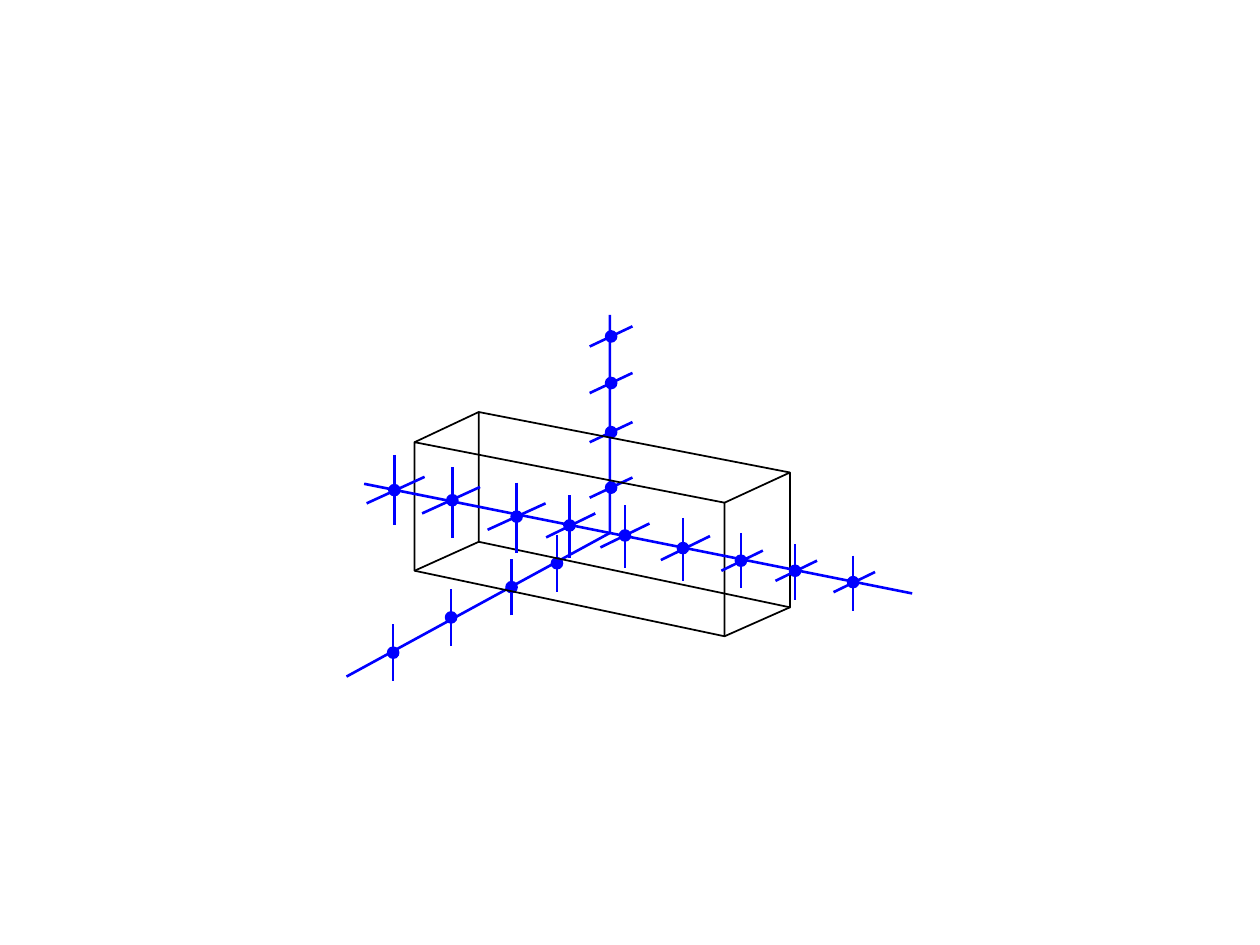
from lxml import etree
from pptx import Presentation
from pptx.dml.color import RGBColor
from pptx.enum.shapes import MSO_CONNECTOR, MSO_SHAPE
from pptx.oxml.ns import qn
from pptx.util import Inches, Pt

STRAIGHT = MSO_CONNECTOR.STRAIGHT
OVAL = MSO_SHAPE.OVAL
BLUE, BLACK = "0000FF", "000000"
AXIS_WIDTH, EDGE_WIDTH = 1.5, 1
DOT_SIZE = 0.09

# Figure box: left, top; all other positions are relative to it
FIGURE_BOX = (2.75, 2.5)

LONG_AXIS = ((0.14, 1.34), (4.49, 2.21))
# Nodes: x, y, top of upright tick, x of slanted tick
LONG_NODES = [
    (0.38, 1.39, 1.11, 0.39), (0.84, 1.47, 1.21, 0.83), (1.35, 1.6, 1.33, 1.35),
    (1.77, 1.67, 1.43, 1.78), (2.21, 1.75, 1.51, 2.21), (2.67, 1.85, 1.61, 2.69),
    (3.13, 1.95, 1.73, 3.14), (3.56, 2.03, 1.82, 3.57), (4.02, 2.12, 1.91, 4.03),
]
# Tick sizes shrink after every third node: upright height, slant width, slant rise
LONG_TICKS = [(0.56, 0.46, 0.21), (0.5, 0.39, 0.19), (0.33 + 0.11, 0.33, 0.16)]

BENT_AXIS = [(0, 2.87), (2.09, 1.73), (2.09, 0)]
VERTICAL_NODES = [(2.1, y) for y in (1.37, 0.93, 0.54, 0.17)]
DEPTH_NODES = [(1.67, 1.97), (1.31, 2.16), (0.83, 2.4), (0.37, 2.68)]

FRONT_FACE = [(0.54, 1.01), (0.54, 2.03), (3, 2.55), (3, 1.49)]
BACK_FACE = [(1.05, 0.77), (1.05, 1.8), (3.52, 2.32), (3.52, 1.25)]


def rgb(hex_color):
    return RGBColor.from_string(hex_color)


def place(box, point):
    return Inches(box[0] + point[0]), Inches(box[1] + point[1])


def add_line(shapes, box, start, end, color=BLUE, width=AXIS_WIDTH):
    line = shapes.add_connector(STRAIGHT, *place(box, start), *place(box, end))
    line.line.color.rgb = rgb(color)
    line.line.width = Pt(width)
    etree.SubElement(line._element.spPr, qn("a:effectLst"))


def add_outline(shapes, box, points, color, width, close):
    corners = [place(box, point) for point in points]
    builder = shapes.build_freeform(*corners[0])
    builder.add_line_segments(corners[1:], close=close)
    outline = builder.convert_to_shape()
    outline.fill.background()
    outline.line.color.rgb = rgb(color)
    outline.line.width = Pt(width)
    outline.shadow.inherit = False


def add_dot(shapes, box, center):
    corner = [value - DOT_SIZE / 2 for value in center]
    dot = shapes.add_shape(OVAL, *place(box, corner), Inches(DOT_SIZE), Inches(DOT_SIZE))
    dot.fill.solid()
    dot.fill.fore_color.rgb = rgb(BLUE)
    dot.line.color.rgb = rgb(BLUE)
    dot.line.width = Pt(0.75)
    dot.shadow.inherit = False


def add_tick(shapes, box, center, width, rise):
    x, y = center
    add_line(shapes, box, (x - width / 2, y + rise / 2), (x + width / 2, y - rise / 2))


def draw_prism(shapes, box):
    for face in (FRONT_FACE, BACK_FACE):
        add_outline(shapes, box, face, BLACK, EDGE_WIDTH, True)
    for front, back in zip(FRONT_FACE, BACK_FACE):
        add_line(shapes, box, front, back, BLACK, EDGE_WIDTH)


def draw_long_axis(shapes, box):
    add_line(shapes, box, *LONG_AXIS)
    for index, (x, y, top, slant_x) in enumerate(LONG_NODES):
        height, width, rise = LONG_TICKS[index // 3]
        add_line(shapes, box, (x, top), (x, top + height))
        add_dot(shapes, box, (x, y))
        add_tick(shapes, box, (slant_x, y), width, rise)


def draw_bent_axis(shapes, box):
    add_outline(shapes, box, BENT_AXIS, BLUE, AXIS_WIDTH, False)
    # Slanted ticks on the vertical part, upright ticks on the depth part
    for nodes, width, rise in ((VERTICAL_NODES, 0.34, 0.16), (DEPTH_NODES, 0, 0.45)):
        for node in nodes:
            add_dot(shapes, box, node)
            add_tick(shapes, box, node, width, rise)


def main():
    prs = Presentation()
    prs.slide_width, prs.slide_height = Inches(10), Inches(7.5)
    slide = prs.slides.add_slide(prs.slide_layouts[6])
    figure = slide.shapes.add_group_shape().shapes
    for draw in (draw_bent_axis, draw_prism, draw_long_axis):
        draw(figure, FIGURE_BOX)
    prs.save("out.pptx")


if __name__ == "__main__":
    main()
